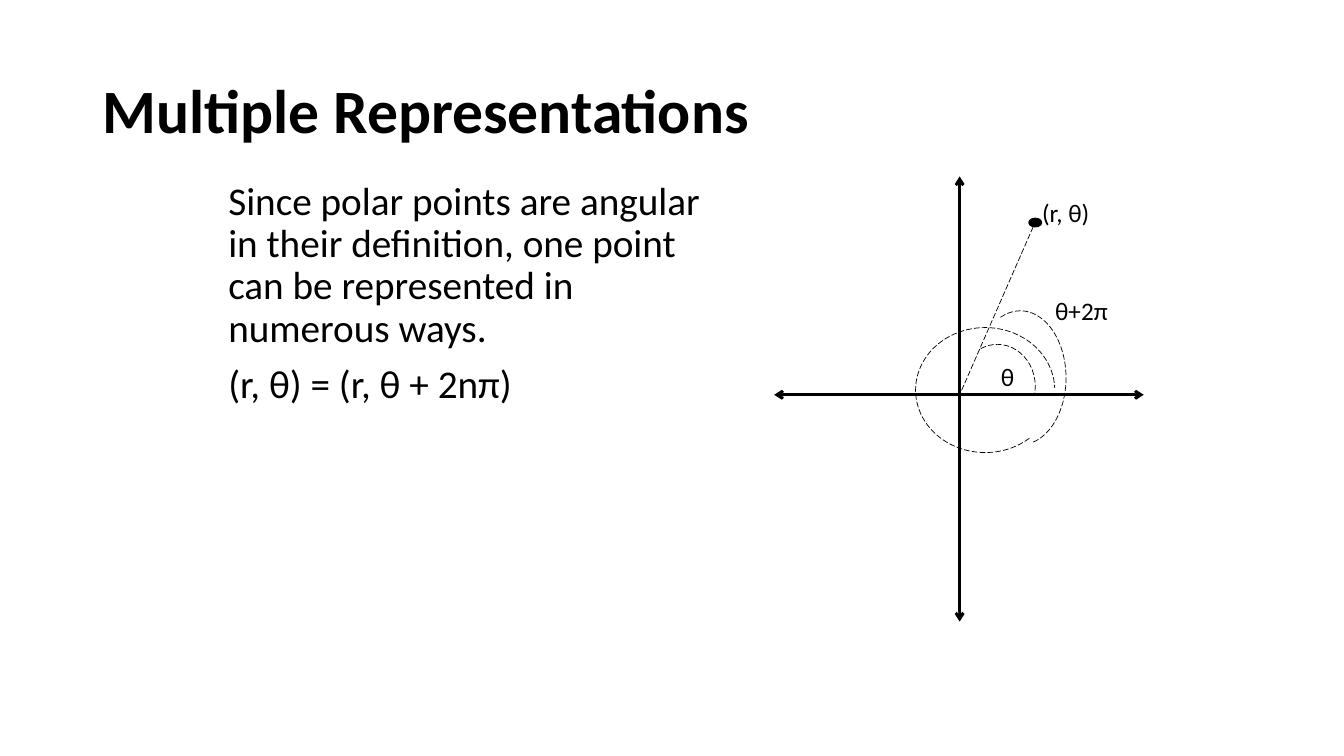
from lxml.etree import SubElement
from pptx import Presentation
from pptx.dml.color import RGBColor
from pptx.enum.dml import MSO_LINE
from pptx.enum.shapes import MSO_CONNECTOR, MSO_SHAPE
from pptx.enum.text import MSO_ANCHOR, MSO_AUTO_SIZE
from pptx.oxml.ns import qn
from pptx.util import Pt

COLORS = {"ink": "000000"}
INK = RGBColor.from_string(COLORS["ink"])

presentation = Presentation()
presentation.slide_width, presentation.slide_height = Pt(960), Pt(540)
slide = presentation.slides.add_slide(presentation.slide_layouts[6])


def add_text(box, lines, size, bold=False, wrap=True):
    shape = slide.shapes.add_textbox(*map(Pt, box))
    frame = shape.text_frame
    frame.text = "\n".join(lines)
    frame.word_wrap = wrap
    for paragraph in frame.paragraphs:
        font = paragraph.runs[0].font
        font.name, font.size, font.bold = "Calibri", Pt(size), bold
        font.color.rgb = INK
    return frame


def add_line(start, end, width):
    connector = slide.shapes.add_connector(
        MSO_CONNECTOR.STRAIGHT, *map(Pt, start + end))
    connector.line.color.rgb = INK
    connector.line.width = Pt(width)
    SubElement(connector.line._get_or_add_ln().getparent(), qn("a:effectLst"))
    return connector.line


# Title and body
title = add_text((66, 28.8, 828, 104.4), ["Multiple Representations"], 44, bold=True)
title.vertical_anchor = MSO_ANCHOR.MIDDLE
title.paragraphs[0].line_spacing = 0.9

body = add_text((156, 126, 354, 356.4), [
    "Since polar points are angular in their definition, "
    "one point can be represented in numerous ways.",
    "(r, θ) = (r, θ + 2nπ)",
], 28)
for paragraph in body.paragraphs:
    paragraph.line_spacing = 0.9
    paragraph.space_before = Pt(10)

# Axes with arrowheads at both ends
origin_x, origin_y = 685.5, 282
for start, end in [((origin_x, 126), (origin_x, 444)),
                   ((553, origin_y), (817, origin_y))]:
    axis = add_line(start, end, 2)
    for arrowhead in ("a:headEnd", "a:tailEnd"):
        SubElement(axis._get_or_add_ln(), qn(arrowhead), type="arrow")

# Dashed radius from the point to the origin
radius = add_line((738, 162), (origin_x, origin_y), 0.5)
radius.dash_style = MSO_LINE.LONG_DASH

# Angle arcs: box, start and end in degrees
arcs = [
    ((685.5, 246, 54, 60), 246.11, 12.42),
    ((654, 234, 99.4, 89.3), 47.46, 358.13),
    ((696, 222, 65.5, 95.8), 251.97, 78.72),
]
for box, start_angle, end_angle in arcs:
    arc = slide.shapes.add_shape(MSO_SHAPE.ARC, *map(Pt, box))
    arc.shadow.inherit = False
    arc.adjustments[0] = start_angle * 0.6
    arc.adjustments[1] = end_angle * 0.6
    arc.fill.background()
    arc.line.color.rgb = INK
    arc.line.width = Pt(0.5)
    arc.line.dash_style = MSO_LINE.LONG_DASH

# Polar point
point = slide.shapes.add_shape(MSO_SHAPE.OVAL, Pt(735), Pt(156), Pt(9), Pt(6))
point.shadow.inherit = False
point.fill.solid()
point.fill.fore_color.rgb = INK
point.line.color.rgb = INK
point.line.width = Pt(1)

# Labels
labels = [
    ("(r, θ)", (737.3, 137.5, 49, 29), False),
    ("θ", (707.8, 254.2, 24.5, 29), False),
    ("θ+2π", (746.6, 207.4, 69.8, 29), True),
]
for text, box, wrap in labels:
    label = add_text(box, [text], 18, wrap=wrap)
    label.auto_size = MSO_AUTO_SIZE.SHAPE_TO_FIT_TEXT

presentation.save("out.pptx")
